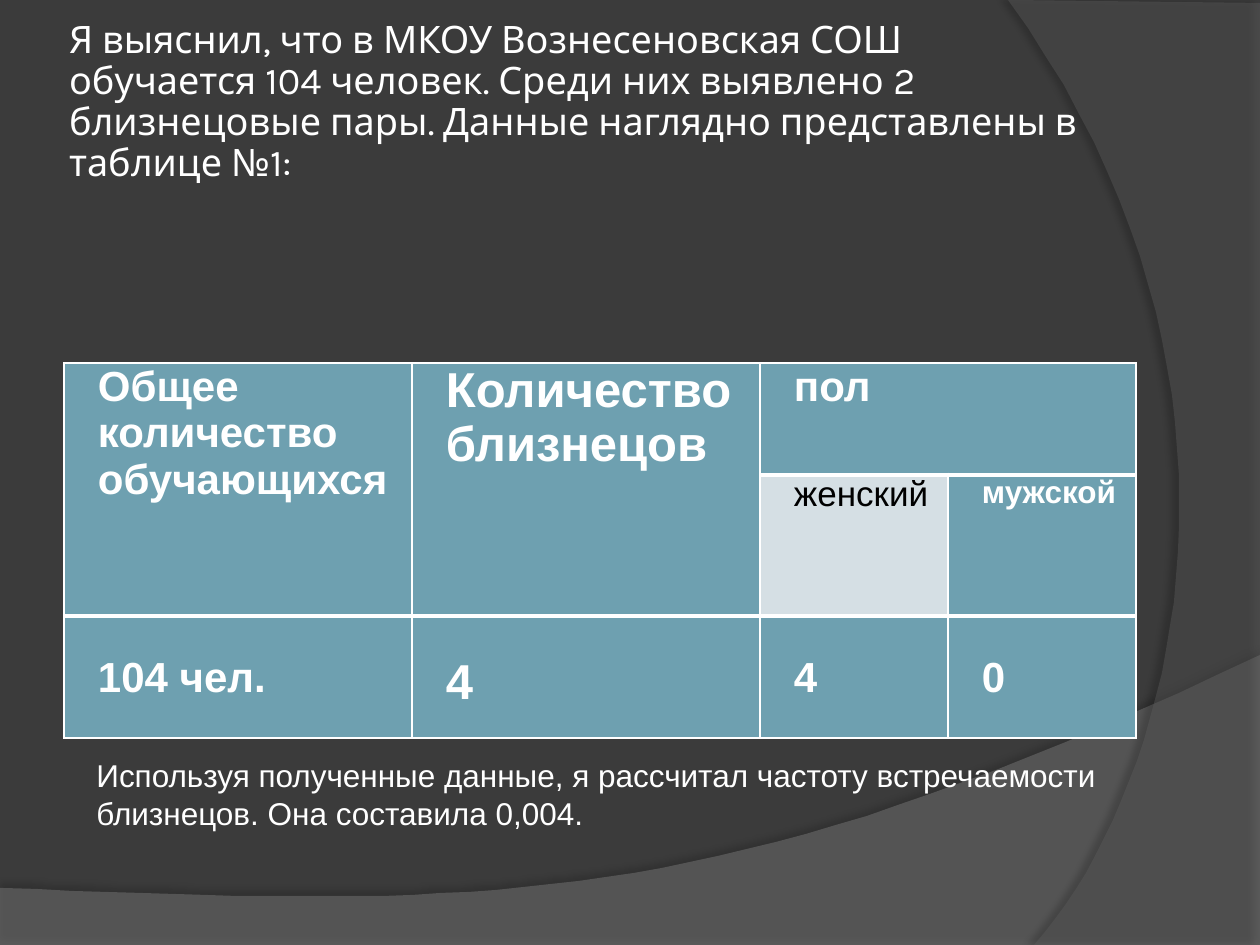
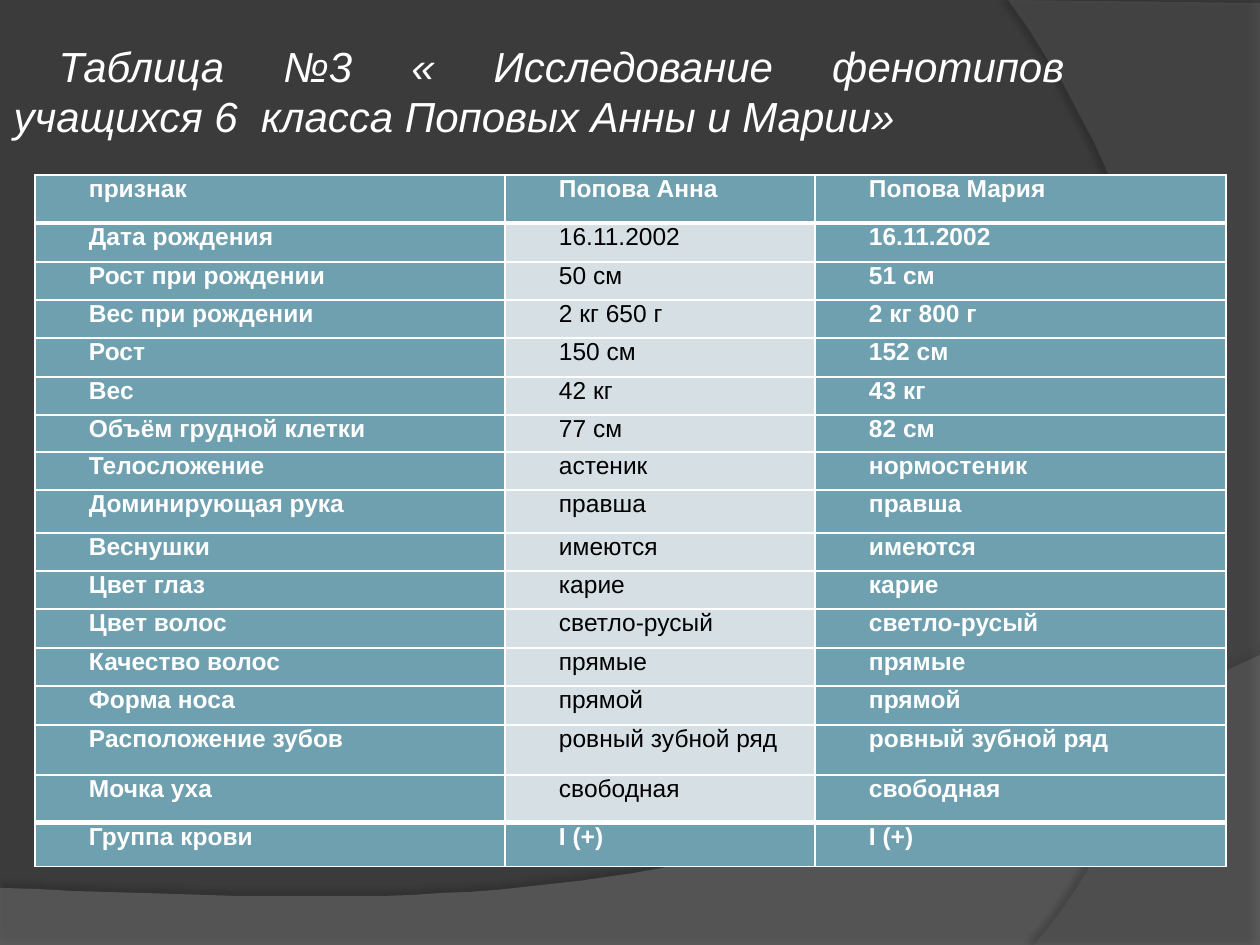
from lxml import etree
from pptx import Presentation
from pptx.dml.color import RGBColor
from pptx.enum.text import MSO_ANCHOR, MSO_AUTO_SIZE, PP_ALIGN
from pptx.oxml.ns import qn
from pptx.util import Pt

LEFT, JUSTIFY = PP_ALIGN.LEFT, PP_ALIGN.JUSTIFY
MIDDLE = MSO_ANCHOR.MIDDLE
NO_AUTOFIT = MSO_AUTO_SIZE.NONE

PX = 914400 / 126
COLORS = {name: RGBColor.from_string(value) for name, value in {
    "background": "3B3B3B", "wave": "7F7F7F", "arc": "5E5E5E",
    "white": "FFFFFF", "black": "000000",
    "teal": "6EA0B0", "pale": "D5DFE4",
}.items()}
THIN, THICK = 1, 3


def set_text(frame, text, size, color, font="Arial", align=LEFT, left=0, first=0):
    """Fill a frame with one paragraph; left and first are its indents in px."""
    frame.text = text
    frame.word_wrap = True
    paragraph = frame.paragraphs[0]
    paragraph.alignment = align
    paragraph.font.name = font
    paragraph.font.size = Pt(size)
    paragraph.font.color.rgb = COLORS[color]
    properties = paragraph._p.get_or_add_pPr()
    properties.set("marL", str(round(left * PX)))
    properties.set("indent", str(round(first * PX)))
    return paragraph


def style_cell(cell, pale, top, bottom):
    """Set insets, fill and white borders; top and bottom are widths in points."""
    cell.margin_left = cell.margin_right = round(9 * PX)
    cell.margin_top = cell.margin_bottom = 0
    cell.fill.solid()
    cell.fill.fore_color.rgb = COLORS["pale" if pale else "teal"]
    borders = {"lnL": THIN, "lnR": THIN, "lnT": top, "lnB": bottom}
    for position, (side, width) in enumerate(borders.items()):
        line = etree.Element(qn(f"a:{side}"), w=str(Pt(width)))
        fill = etree.SubElement(line, qn("a:solidFill"))
        etree.SubElement(fill, qn("a:srgbClr"), val=str(COLORS["white"]))
        cell._tc.get_or_add_tcPr().insert(position, line)


deck = Presentation()
deck.slide_width = round(1260 * PX)
deck.slide_height = round(945 * PX)
master = deck.slide_master
master.background.fill.solid()
master.background.fill.fore_color.rgb = COLORS["background"]
title_only = deck.slide_layouts[5]
count_page = deck.slides.add_slide(title_only)
traits_page = deck.slides.add_slide(title_only)

# Curved bands: straight corners, then a Bezier curve from the last corner.
# Each ends with fill opacity, shadow opacity, distance and direction.
bands = [
    ("wave", [(0, 888), (0, 946), (1260, 946), (1260, 655)],
     [(704, 919), (493, 906), (0, 888)], 45, 35, 3.5, 270),
    ("arc", [(1260, 3), (1260, 945), (1034, 945)],
     [(1178, 780), (1283, 378), (1008, 0)], 40, 45, 4, 180),
]
STEPS = 40
first_on_master = master.shapes[0].element
for color, corners, controls, opacity, shade, distance, direction in bands:
    curve = []
    for step in range(1, STEPS + 1):
        t = step / STEPS
        weights = ((1 - t) ** 3, 3 * t * (1 - t) ** 2, 3 * t ** 2 * (1 - t), t ** 3)
        points = [corners[-1], *controls]
        curve.append(tuple(sum(w * point[axis] for w, point in zip(weights, points))
                           for axis in (0, 1)))
    builder = count_page.shapes.build_freeform(*corners[0], scale=PX)
    builder.add_line_segments(corners[1:] + curve)
    band = builder.convert_to_shape()
    band.fill.solid()
    band.fill.fore_color.rgb = COLORS[color]
    band.line.fill.background()
    band.shadow.inherit = False
    properties = band.element.spPr
    fill_color = properties.find(qn("a:solidFill")).find(qn("a:srgbClr"))
    etree.SubElement(fill_color, qn("a:alpha"), val=str(opacity * 1000))
    shadow = etree.SubElement(
        properties.find(qn("a:effectLst")), qn("a:outerShdw"), blurRad=str(Pt(4)),
        dist=str(Pt(distance)), dir=str(direction * 60000), algn="ctr", rotWithShape="0")
    shadow_color = etree.SubElement(shadow, qn("a:srgbClr"), val=str(COLORS["black"]))
    etree.SubElement(shadow_color, qn("a:alpha"), val=str(shade * 1000))
    first_on_master.addprevious(band.element)

# Titles
titles = [
    (count_page, (63, 38, 1029, 176)),
    (traits_page, (1, 33, 1076, 115)),
]
for page, bounds in titles:
    title = page.shapes.title
    title.left, title.top, title.width, title.height = (round(v * PX) for v in bounds)
    title.text_frame.auto_size = NO_AUTOFIT
    title.text_frame.vertical_anchor = MIDDLE

frame = count_page.shapes.title.text_frame
frame.margin_left = frame.margin_right = frame.margin_top = round(6 * PX)
frame.margin_bottom = round(52 * PX)
paragraph = set_text(
    frame,
    "Я выяснил, что в МКОУ Вознесеновская СОШ обучается 104 человек. Среди них "
    "выявлено 2 близнецовые пары. Данные наглядно представлены в таблице №1:",
    21.6, "white", font="Karla")
paragraph.line_spacing = 0.9

paragraph = set_text(
    traits_page.shapes.title.text_frame,
    "Таблица №3 « Исследование фенотипов учащихся 6  класса Поповых Анны и Марии»",
    24, "white", align=JUSTIFY, first=45)
paragraph.font.italic = True

# Twin counts: text and size by cell, None where a merged cell covers the place
count_rows = [
    [("Общее количество обучающихся", 24), ("Количество близнецов", 28), ("пол", 24), None],
    [None, None, ("женский", 20), ("мужской", 18)],
    [("104 чел.", 24), ("4", 28), ("4", 24), ("0", 24)],
]
count_widths = [348, 348, 188, 188]
count_heights = [112, 141, 122]

trait_rows = [
    ("признак", "Попова Анна", "Попова Мария"),
    ("Дата рождения", "16.11.2002", "16.11.2002"),
    ("Рост при рождении", "50 см", "51 см"),
    ("Вес при рождении", "2 кг 650 г", "2 кг 800 г"),
    ("Рост", "150 см", "152 см"),
    ("Вес", "42 кг", "43 кг"),
    ("Объём грудной клетки", "77 см", "82 см"),
    ("Телосложение", "астеник", "нормостеник"),
    ("Доминирующая рука", "правша", "правша"),
    ("Веснушки", "имеются", "имеются"),
    ("Цвет глаз", "карие", "карие"),
    ("Цвет волос", "светло-русый", "светло-русый"),
    ("Качество волос", "прямые", "прямые"),
    ("Форма носа", "прямой", "прямой"),
    ("Расположение зубов", "ровный зубной ряд", "ровный зубной ряд"),
    ("Мочка уха", "свободная", "свободная"),
    ("Группа крови", "I (+)", "I (+)"),
]
trait_rows = [[(text, 14) for text in row] for row in trait_rows]
trait_widths = [470, 310, 411]
trait_heights = [48, 39, 38, 38, 39, 38, 37, 38, 43, 38, 38, 39, 38, 39, 50, 48, 44]

# Each table: page, corner, rows, sizes, pale column, paragraph indents
tables = [
    (count_page, 64, 363, count_rows, count_widths, count_heights, 2, {"left": 25}),
    (traits_page, 35, 175, trait_rows, trait_widths, trait_heights, 1, {"first": 45}),
]
grids = []
for page, x, y, rows, widths, heights, pale_column, indents in tables:
    bounds = (round(v * PX) for v in (x, y, sum(widths), sum(heights)))
    grid = page.shapes.add_table(len(rows), len(widths), *bounds).table
    grid.first_row = grid.horz_banding = False
    for column, width in zip(grid.columns, widths):
        column.width = round(width * PX)
    for row, height in zip(grid.rows, heights):
        row.height = round(height * PX)
    last = len(rows) - 1
    for r, row in enumerate(rows):
        for c, content in enumerate(row):
            pale = c == pale_column and 0 < r < last
            cell = grid.cell(r, c)
            style_cell(cell, pale,
                       top=THICK if r in (1, last) else THIN,
                       bottom=THICK if r in (0, last - 1) else THIN)
            if content:
                text, size = content
                paragraph = set_text(cell.text_frame, text, size,
                                     "black" if pale else "white", align=JUSTIFY, **indents)
                paragraph.font.bold = not pale
    grids.append(grid)

count_grid = grids[0]
for c in (0, 1):
    style_cell_top = count_grid.cell(0, c)
    style_cell_top.merge(count_grid.cell(1, c))
count_grid.cell(0, 2).merge(count_grid.cell(0, 3))
for cell in count_grid.rows[2].cells:
    cell.margin_top = round(39 * PX)

note = count_page.shapes.add_textbox(*(round(v * PX) for v in (84, 750, 1091, 89)))
set_text(
    note.text_frame,
    "Используя полученные данные, я рассчитал частоту встречаемости близнецов. "
    "Она составила 0,004.",
    18, "white")

deck.save("out.pptx")
